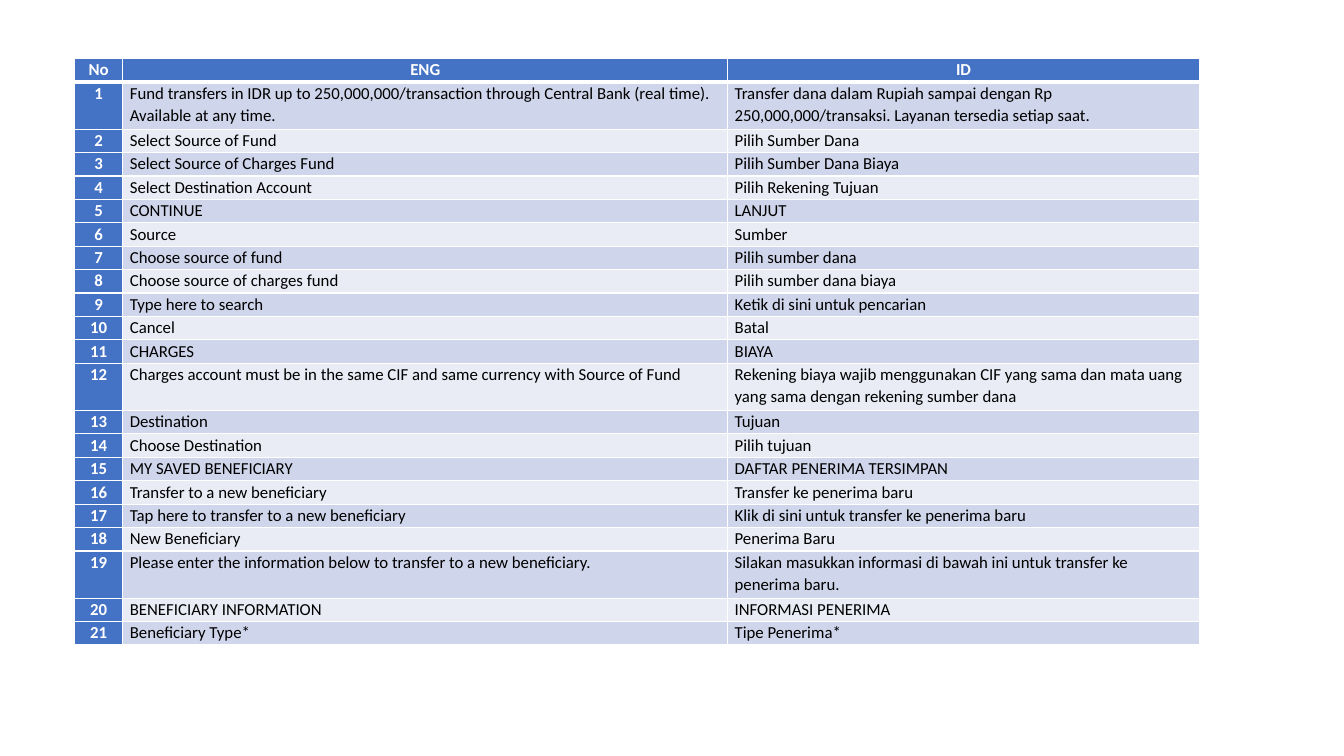
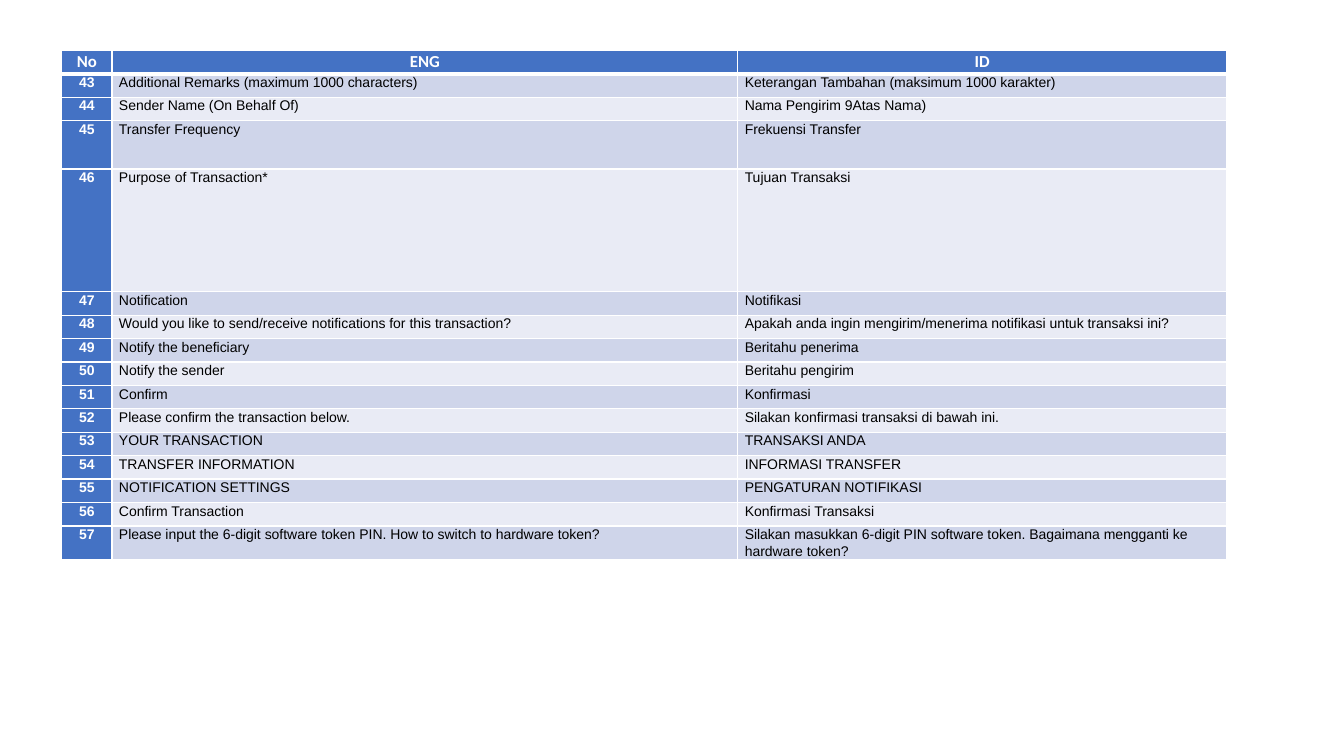
from dataclasses import dataclass

from lxml.etree import SubElement
from pptx import Presentation
from pptx.dml.color import RGBColor
from pptx.enum.text import MSO_ANCHOR, PP_ALIGN
from pptx.oxml.ns import qn
from pptx.util import Emu, Pt

# 288 px to the inch
EMU_PER_PX = 3175
SLIDE_W, SLIDE_H = 3840, 2160


@dataclass(frozen=True)
class Theme:
    header_fill: str = "4472C4"
    bands: tuple = ("CFD5EA", "E9EBF5")
    light: str = "FFFFFF"
    dark: str = "000000"
    font: str = "Calibri"
    size: int = 12
    small_font: str = "Arial"
    small_size: int = 10
    line_spacing: float = 1.07
    border: int = 1
    header_border: int = 3
    row_h: int = 67
    inset: int = 20


THEME = Theme()
HEADINGS = ("No", "ENG", "ID")

# Wording: English and Indonesian
ENTRY_PHRASES = [
    ("Fund transfers in IDR up to 250,000,000/transaction through Central Bank (real time). "
     "Available at any time.",
     "Transfer dana dalam Rupiah sampai dengan Rp 250,000,000/transaksi. "
     "Layanan tersedia setiap saat."),
    ("Select Source of Fund", "Pilih Sumber Dana"),
    ("Select Source of Charges Fund", "Pilih Sumber Dana Biaya"),
    ("Select Destination Account", "Pilih Rekening Tujuan"),
    ("CONTINUE", "LANJUT"),
    ("Source", "Sumber"),
    ("Choose source of fund", "Pilih sumber dana"),
    ("Choose source of charges fund", "Pilih sumber dana biaya"),
    ("Type here to search", "Ketik di sini untuk pencarian"),
    ("Cancel", "Batal"),
    ("CHARGES", "BIAYA"),
    ("Charges account must be in the same CIF and same currency with Source of Fund",
     "Rekening biaya wajib menggunakan CIF yang sama dan mata uang yang sama "
     "dengan rekening sumber dana"),
    ("Destination", "Tujuan"),
    ("Choose Destination", "Pilih tujuan"),
    ("MY SAVED BENEFICIARY", "DAFTAR PENERIMA TERSIMPAN"),
    ("Transfer to a new beneficiary", "Transfer ke penerima baru"),
    ("Tap here to transfer to a new beneficiary",
     "Klik di sini untuk transfer ke penerima baru"),
    ("New Beneficiary", "Penerima Baru"),
    ("Please enter the information below to transfer to a new beneficiary.",
     "Silakan masukkan informasi di bawah ini untuk transfer ke penerima baru."),
    ("BENEFICIARY INFORMATION", "INFORMASI PENERIMA"),
    ("Beneficiary Type*", "Tipe Penerima*"),
]

CONFIRM_PHRASES = [
    ("Additional Remarks (maximum 1000 characters)",
     "Keterangan Tambahan (maksimum 1000 karakter)"),
    ("Sender Name (On Behalf Of)", "Nama Pengirim 9Atas Nama)"),
    ("Transfer Frequency", "Frekuensi Transfer"),
    ("Purpose of Transaction*", "Tujuan Transaksi"),
    ("Notification", "Notifikasi"),
    ("Would you like to send/receive notifications for this transaction?",
     "Apakah anda ingin mengirim/menerima notifikasi untuk transaksi ini?"),
    ("Notify the beneficiary", "Beritahu penerima"),
    ("Notify the sender", "Beritahu pengirim"),
    ("Confirm", "Konfirmasi"),
    ("Please confirm the transaction below.", "Silakan konfirmasi transaksi di bawah ini."),
    ("YOUR TRANSACTION", "TRANSAKSI ANDA"),
    ("TRANSFER INFORMATION", "INFORMASI TRANSFER"),
    ("NOTIFICATION SETTINGS", "PENGATURAN NOTIFIKASI"),
    ("Confirm Transaction", "Konfirmasi Transaksi"),
    ("Please input the 6-digit software token PIN. How to switch to hardware token?",
     "Silakan masukkan 6-digit PIN software token. "
     "Bagaimana mengganti ke hardware token?"),
]


def px(n):
    return Emu(n * EMU_PER_PX)


def write_text(tf, text, *, font, size, color, bold=False, align=PP_ALIGN.LEFT):
    p = tf.paragraphs[0]
    p.alignment = align
    p.line_spacing = THEME.line_spacing
    r = p.add_run()
    r.text = text
    r.font.name = font
    r.font.size = Pt(size)
    r.font.bold = bold
    r.font.color.rgb = RGBColor.from_string(color)


def set_borders(cell, top, bottom):
    """Draw the four cell edges; they must come before the fill in the XML."""
    tc_pr = cell._tc.get_or_add_tcPr()
    widths = {"a:lnL": THEME.border, "a:lnR": THEME.border, "a:lnT": top, "a:lnB": bottom}
    for tag, width in widths.items():
        ln = SubElement(tc_pr, qn(tag), w=str(Pt(width)))
        fill = SubElement(ln, qn("a:solidFill"))
        SubElement(fill, qn("a:srgbClr"), val=THEME.light)


def style_cell(cell, fill, top=THEME.border, bottom=THEME.border):
    cell.margin_left = cell.margin_right = px(THEME.inset)
    cell.margin_top = cell.margin_bottom = 0
    cell.vertical_anchor = MSO_ANCHOR.TOP
    set_borders(cell, top, bottom)
    cell.fill.solid()
    cell.fill.fore_color.rgb = RGBColor.from_string(fill)


def add_phrase_table(slide, phrases, *, left, top, col_widths, first_no, tall_rows, font, size):
    """Numbered table of phrases; tall_rows maps a number to its row height."""
    heights = [THEME.row_h] + [tall_rows.get(first_no + i, THEME.row_h)
                               for i in range(len(phrases))]
    table = slide.shapes.add_table(len(heights), len(col_widths), px(left), px(top),
                                   px(sum(col_widths)), px(sum(heights))).table
    table.first_col = True
    for col, width in zip(table.columns, col_widths):
        col.width = px(width)
    for row, height in zip(table.rows, heights):
        row.height = px(height)

    # Header row
    label = dict(color=THEME.light, bold=True, align=PP_ALIGN.CENTER)
    for cell, heading in zip(table.rows[0].cells, HEADINGS):
        style_cell(cell, THEME.header_fill, bottom=THEME.header_border)
        write_text(cell.text_frame, heading, font=THEME.font, size=THEME.size, **label)

    # Numbered, banded rows
    for i, phrase in enumerate(phrases):
        edge = THEME.border if i else THEME.header_border
        number, *wording = table.rows[i + 1].cells
        style_cell(number, THEME.header_fill, top=edge)
        write_text(number.text_frame, str(first_no + i), font=font, size=size, **label)
        for cell, text in zip(wording, phrase):
            style_cell(cell, THEME.bands[i % 2], top=edge)
            write_text(cell.text_frame, text, font=font, size=size, color=THEME.dark)


def main():
    prs = Presentation()
    prs.slide_width, prs.slide_height = px(SLIDE_W), px(SLIDE_H)
    blank = prs.slide_layouts[6]

    # Phrases 1 to 21
    add_phrase_table(prs.slides.add_slide(blank), ENTRY_PHRASES,
                     left=213, top=167, col_widths=(138, 1728, 1348), first_no=1,
                     tall_rows=dict.fromkeys((1, 12, 19), 135),
                     font=THEME.font, size=THEME.size)

    # Phrases 43 to 57
    add_phrase_table(prs.slides.add_slide(blank), CONFIRM_PHRASES,
                     left=176, top=144, col_widths=(144, 1788, 1397), first_no=43,
                     tall_rows={45: 138, 46: 351},
                     font=THEME.small_font, size=THEME.small_size)

    prs.save("out.pptx")


if __name__ == "__main__":
    main()
